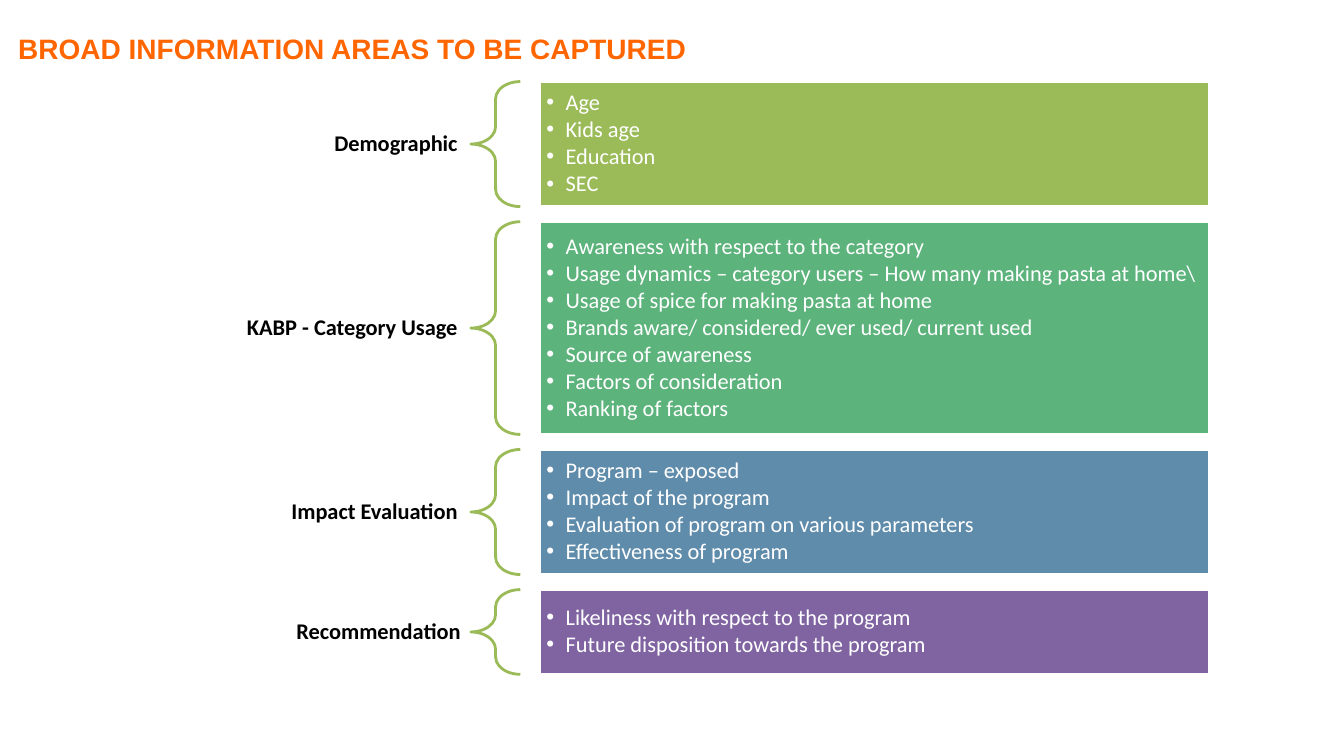
from lxml import etree
from pptx import Presentation
from pptx import util as u
from pptx.dml.color import RGBColor
from pptx.enum import shapes, text
from pptx.oxml.ns import qn

ORANGE = RGBColor(0xFF, 0x66, 0x00)
LIME = RGBColor(0x9B, 0xBB, 0x59)
GREEN = RGBColor(0x5C, 0xB3, 0x7C)
BLUE = RGBColor(0x60, 0x8C, 0xAB)
PURPLE = RGBColor(0x80, 0x64, 0xA2)
WHITE = RGBColor(0xFF, 0xFF, 0xFF)
BLACK = RGBColor(0x00, 0x00, 0x00)

TOP, GAP = 0.81, 0.15
LABEL_LEFT, LABEL_WIDTH, LABEL_HEIGHT = 2.22, 2.44, 0.84
BRACE_LEFT, BRACE_WIDTH = 4.67, 0.49
PANEL_LEFT, PANEL_WIDTH = 5.35, 6.65

# Label, panel height, panel colour, label shift to the right, points
AREAS = [
    ("Demographic", 1.24, LIME, 0, ["Age", "Kids age", "Education", "SEC"]),
    ("KABP - Category Usage", 2.11, GREEN, 0, [
        "Awareness with respect to the category",
        "Usage dynamics – category users – How many making pasta at home\\",
        "Usage of spice for making pasta at home",
        "Brands aware/ considered/ ever used/ current used",
        "Source of awareness",
        "Factors of consideration",
        "Ranking of factors"]),
    ("Impact Evaluation", 1.24, BLUE, 0, [
        "Program – exposed",
        "Impact of the program",
        "Evaluation of program on various parameters",
        "Effectiveness of program"]),
    ("Recommendation", 0.84, PURPLE, 0.03, [
        "Likeliness with respect to the program",
        "Future disposition towards the program"]),
]


def set_font(para, name, size, color, bold=False):
    for span in para.runs:
        span.font.name = name
        span.font.size = u.Pt(size)
        span.font.bold = bold
        span.font.color.rgb = color


def set_frame(frame, side, edge, anchor):
    frame.word_wrap = True
    frame.auto_size = text.MSO_AUTO_SIZE.NONE
    frame.vertical_anchor = anchor
    frame.margin_left = frame.margin_right = u.Inches(side)
    frame.margin_top = frame.margin_bottom = u.Inches(edge)


def add_bullet(para):
    props = para._p.get_or_add_pPr()
    props.set("marL", str(u.Inches(0.19)))
    props.set("indent", str(-u.Inches(0.19)))
    etree.SubElement(props, qn("a:buFont")).set("typeface", "Arial")
    etree.SubElement(props, qn("a:buChar")).set("char", "•")


def add_title(slide, left, top, width, height):
    title = slide.shapes.title
    title.left, title.top = u.Inches(left), u.Inches(top)
    title.width, title.height = u.Inches(width), u.Inches(height)
    frame = title.text_frame
    frame.text = "BROAD INFORMATION AREAS TO BE CAPTURED"
    set_frame(frame, 0, 0.02, text.MSO_ANCHOR.TOP)
    para = frame.paragraphs[0]
    para.alignment = text.PP_ALIGN.LEFT
    para._p.get_or_add_pPr().set("marL", str(u.Inches(0.01)))
    set_font(para, "Arial", 20, ORANGE, bold=True)


def add_label(slide, label, left, middle):
    box = slide.shapes.add_textbox(
        u.Inches(left), u.Inches(middle - LABEL_HEIGHT / 2),
        u.Inches(LABEL_WIDTH), u.Inches(LABEL_HEIGHT))
    box.text_frame.text = label
    set_frame(box.text_frame, 0.12, 0.04, text.MSO_ANCHOR.MIDDLE)
    para = box.text_frame.paragraphs[0]
    para.alignment = text.PP_ALIGN.RIGHT
    para.line_spacing = 0.9
    set_font(para, "Calibri", 16, BLACK, bold=True)


def add_brace(slide, top, height):
    brace = slide.shapes.add_shape(
        shapes.MSO_SHAPE.LEFT_BRACE, u.Inches(BRACE_LEFT), u.Inches(top),
        u.Inches(BRACE_WIDTH), u.Inches(height))
    brace.adjustments[0] = 0.35
    brace.adjustments[1] = 0.5
    brace.shadow.inherit = False
    brace.fill.background()
    brace.line.color.rgb = LIME
    brace.line.width = u.Pt(2)


def add_panel(slide, top, height, color, points):
    panel = slide.shapes.add_shape(
        shapes.MSO_SHAPE.RECTANGLE, u.Inches(PANEL_LEFT), u.Inches(top),
        u.Inches(PANEL_WIDTH), u.Inches(height))
    panel.shadow.inherit = False
    panel.fill.solid()
    panel.fill.fore_color.rgb = color
    panel.line.color.rgb = WHITE
    panel.line.width = u.Pt(2)
    frame = panel.text_frame
    frame.text = "\n".join(points)
    set_frame(frame, 0.07, 0.07, text.MSO_ANCHOR.MIDDLE)
    for para in frame.paragraphs:
        add_bullet(para)
        para.level = 1
        para.alignment = text.PP_ALIGN.LEFT
        para.line_spacing = 0.9
        para.space_after = u.Pt(2.1)
        set_font(para, "Calibri", 16, WHITE)


def add_area(slide, top, label, height, color, shift, points):
    add_label(slide, label, LABEL_LEFT + shift, top + height / 2)
    add_brace(slide, top, height)
    add_panel(slide, top, height, color, points)


def main():
    deck = Presentation()
    deck.slide_width, deck.slide_height = u.Inches(13.33), u.Inches(7.5)
    slide = deck.slides.add_slide(deck.slide_layouts.get_by_name("Title Only"))
    add_title(slide, 0.17, 0.29, 9.33, 0.35)

    # Areas stacked with equal gaps
    top = TOP
    for label, height, color, shift, points in AREAS:
        add_area(slide, top, label, height, color, shift, points)
        top += height + GAP

    deck.save("out.pptx")


if __name__ == "__main__":
    main()
